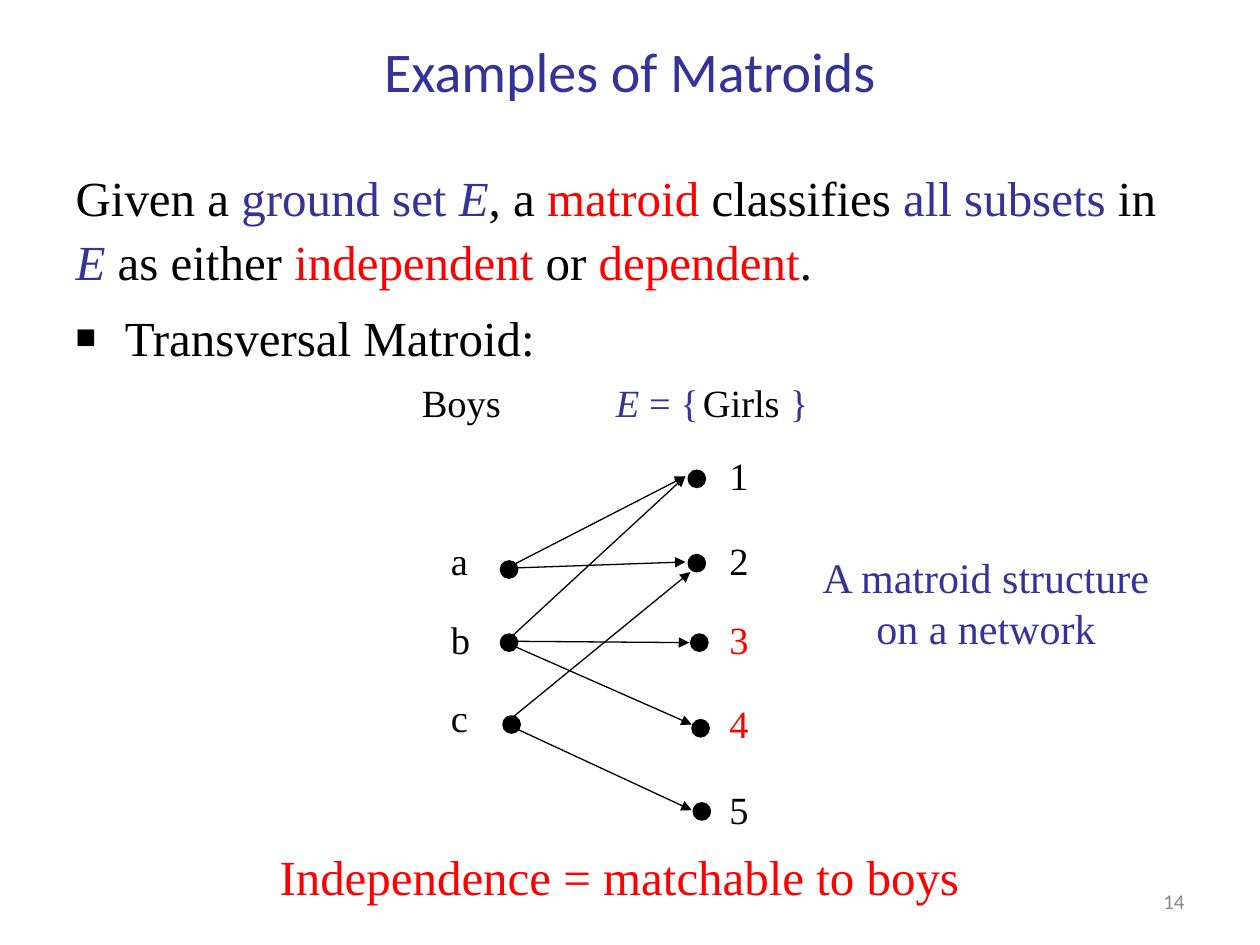
import pptx
import pptx.dml.color
import pptx.enum.shapes
import pptx.enum.text
import pptx.oxml.ns
import pptx.util
from lxml import etree

INK = {"black": "000000", "blue": "333399", "red": "FF0000", "gray": "898989"}
ALIGN = pptx.enum.text.PP_ALIGN
ANCHOR = pptx.enum.text.MSO_ANCHOR
SERIF = "Times New Roman"
WIDE, HIGH = 10, 7.5
COLS, ROWS = 100, 75
LABEL = 4.7
NUMS = {"1": 35.4, "2": 42.1, "3": 48.4, "4": 55.1, "5": 61.9}
BOYS = {"a": 42.1, "b": 48.4, "c": 54.6}
DOTS = [(39.8, 44.6), (39.8, 50.4), (40, 56.9), (54.7, 37.4),
        (54.7, 44.1), (54.9, 50.4), (55, 57.2), (55.1, 63.8)]
LINKS = [((40.2, 45.1), (54.4, 37.8)), ((40.2, 45.1), (54.4, 44.6)),
         ((40.2, 50.9), (54.4, 37.8)), ((40.6, 51.2), (54.9, 57.5)),
         ((40.6, 57), (54.8, 45.4)), ((40.9, 57.8), (54.9, 64.3)),
         ((41.1, 50.9), (54.7, 51))]
INTRO = [("Given a", "black"), (" ground set ", "blue"), ("E", "blue", True),
         (", a ", "black"), ("matroid ", "red"), ("classifies ", "black"),
         ("all subsets ", "blue"), ("in ", "black"), ("E ", "blue", True),
         ("as either", "black"), (" independent ", "red"), ("or ", "black"),
         ("dependent", "red"), (".", "black")]


def across(col):
    """Turn a grid column into a length."""
    return pptx.util.Inches(col * WIDE / COLS)


def down(row):
    """Turn a grid row into a length."""
    return pptx.util.Inches(row * HIGH / ROWS)


def frame(col, row, width, height):
    """Turn a grid box into left, top, width and height."""
    return across(col), down(row), across(width), down(height)


def hue(name):
    """Look up a colour by name."""
    return pptx.dml.color.RGBColor.from_string(INK[name])


def write(para, text, size=22, font=SERIF, ink="black", slant=False, align=None):
    """Add one formatted run to a paragraph."""
    run = para.add_run()
    run.text = text
    run.font.size = pptx.util.Pt(size)
    run.font.name = font
    run.font.italic = slant
    run.font.color.rgb = hue(ink)
    if align is not None:
        para.alignment = align


def box(slide, *area, anchor=ANCHOR.TOP):
    """Add a wrapped text box and return its paragraph."""
    text = slide.shapes.add_textbox(*frame(*area)).text_frame
    text.word_wrap = True
    text.vertical_anchor = anchor
    return text.paragraphs[0]


def move(shape, *area):
    """Place a shape on the grid."""
    shape.left, shape.top, shape.width, shape.height = frame(*area)


def mark(para, indent, bullet=None):
    """Set the indent and bullet of a paragraph."""
    para.line_spacing = 1.1
    para.space_before = pptx.util.Pt(6)
    props = para._p.get_or_add_pPr()
    props.set("marL", str(across(indent)))
    props.set("indent", str(-across(indent)))
    qn = pptx.oxml.ns.qn
    if bullet:
        etree.SubElement(props, qn("a:buSzPct"), val="70000")
        etree.SubElement(props, qn("a:buChar"), char=bullet)
    else:
        etree.SubElement(props, qn("a:buNone"))


def dot(slide, col, row):
    """Draw one node of the network."""
    kind = pptx.enum.shapes.MSO_SHAPE.OVAL
    node = slide.shapes.add_shape(kind, *frame(col, row, 1.2, 1.2))
    node.shadow.inherit = False
    node.fill.solid()
    node.fill.fore_color.rgb = hue("black")
    node.line.color.rgb = hue("black")
    node.line.width = pptx.util.Pt(2)


def arrow(slide, start, end):
    """Draw one arrow between two grid points."""
    kind = pptx.enum.shapes.MSO_CONNECTOR.STRAIGHT
    link = slide.shapes.add_connector(
        kind, across(start[0]), down(start[1]), across(end[0]), down(end[1]))
    link.line.color.rgb = hue("black")
    link.line.width = pptx.util.Pt(0.75)
    qn = pptx.oxml.ns.qn
    etree.SubElement(link.line._get_or_add_ln(), qn("a:tailEnd"), type="triangle")
    etree.SubElement(link._element.spPr, qn("a:effectLst"))


def head(slide):
    """Fill the title and body placeholders."""
    title, body = slide.placeholders
    move(title, 5, 1.3, 90, 8.5)
    title.text_frame.vertical_anchor = ANCHOR.MIDDLE
    write(title.text_frame.paragraphs[0], "Examples of Matroids", size=32,
          font="Calibri", ink="blue", align=ALIGN.CENTER)
    move(body, 5, 12.3, 90, 17.5)
    body.text_frame.auto_size = pptx.enum.text.MSO_AUTO_SIZE.NONE
    para = body.text_frame.paragraphs[0]
    mark(para, 0)
    for text, ink, *slant in INTRO:
        write(para, text, size=28, ink=ink, slant=bool(slant))
    para = body.text_frame.add_paragraph()
    para.level = 1
    mark(para, 3.9, "■")
    write(para, "Transversal Matroid:", size=28)


def graph(slide):
    """Draw the network of boys and girls."""
    write(box(slide, 32.5, 29.6, 8.3, LABEL), "Boys")
    write(box(slide, 54.8, 29.6, 11.9, LABEL), "Girls")
    para = box(slide, 47.9, 29.6, 8.8, LABEL)
    write(para, "E ", ink="blue", slant=True)
    write(para, "= {", ink="blue")
    write(box(slide, 61.7, 29.6, 8.3, LABEL), "}", ink="blue")
    for col, names in ((34.8, BOYS), (56.9, NUMS)):
        for name, row in names.items():
            ink = "red" if name in "34" else "black"
            write(box(slide, col, row, 4.2, LABEL), name, ink=ink)
    for spot in DOTS:
        dot(slide, *spot)
    for start, end in LINKS:
        arrow(slide, start, end)


def main():
    """Build the slide and save it."""
    deck = pptx.Presentation()
    deck.slide_width = pptx.util.Inches(WIDE)
    deck.slide_height = pptx.util.Inches(HIGH)
    slide = deck.slides.add_slide(deck.slide_layouts[1])
    head(slide)
    graph(slide)
    write(box(slide, 21.2, 66.7, 56.2, 5.7),
          "Independence = matchable to boys", size=28, ink="red")
    write(box(slide, 72.8, 69.5, 22.2, 4, anchor=ANCHOR.MIDDLE), "14",
          size=12, font="Calibri", ink="gray", align=ALIGN.RIGHT)
    write(box(slide, 64.2, 43.3, 28.1, 9.1), "A matroid structure on a network",
          size=24, ink="blue", align=ALIGN.CENTER)
    deck.save("out.pptx")


if __name__ == "__main__":
    main()
